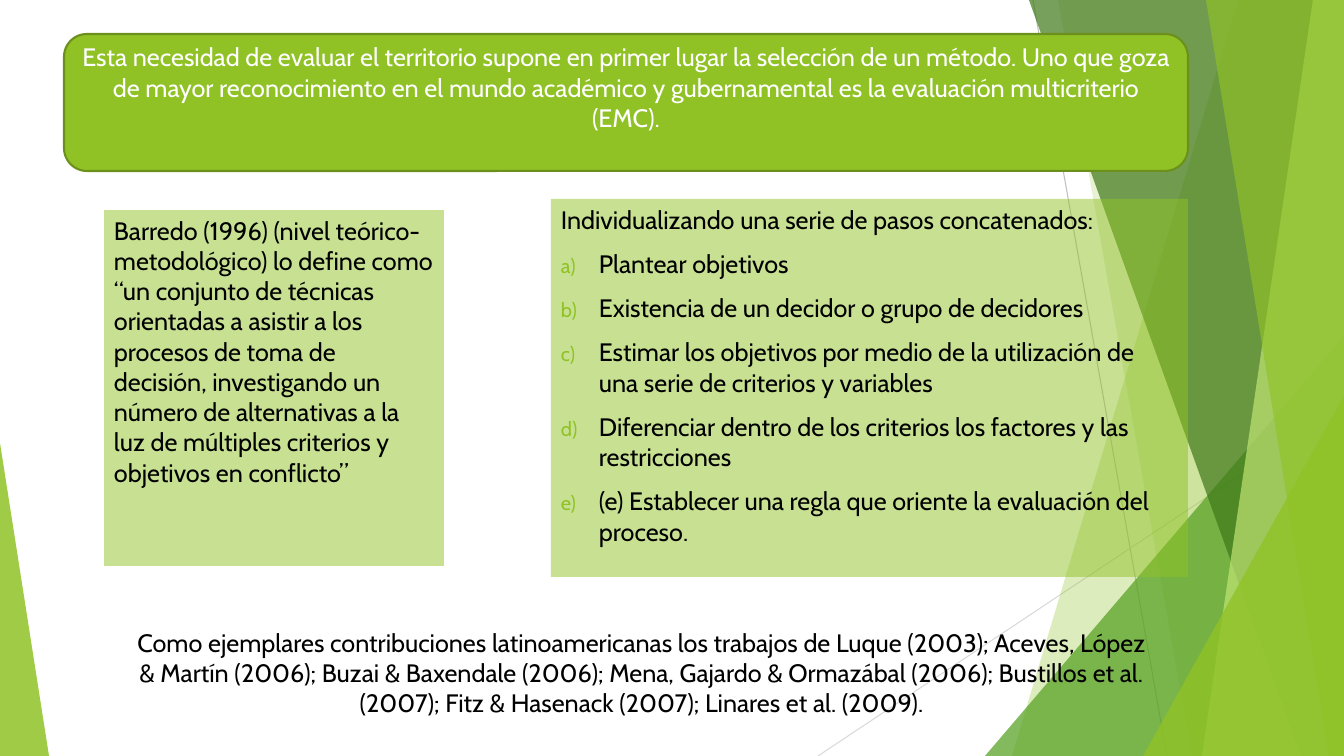
from dataclasses import dataclass

from lxml.etree import SubElement
from pptx import Presentation
from pptx.dml.color import RGBColor
from pptx.enum.shapes import MSO_CONNECTOR, MSO_SHAPE
from pptx.enum.text import PP_ALIGN
from pptx.oxml.ns import qn
from pptx.util import Emu, Pt

EMU_PER_PX = 914400 / 100.8
SLIDE_W, SLIDE_H = 1344, 756


@dataclass(frozen=True)
class Theme:
    font: str = "Cabin"
    text_size: int = 18
    space_before: int = 10
    text: str = "000000"
    inverse: str = "FFFFFF"
    lime: str = "90C226"
    lime_edge: str = "6B901C"
    pale: str = "C0E474"
    green: str = "54A021"
    forest: str = "3F7819"
    ray: str = "BFBFBF"
    ray_light: str = "D9D9D9"


THEME = Theme()

# Top-left x, bottom-left x, colour, opacity; each band reaches the right edge
BANDS_BEHIND = [(1238, 1012, THEME.lime, 30), (1058, 1192, THEME.lime, 20)]
BANDS_FRONT = [
    (1029, 1301, THEME.forest, 70),
    (1313, 1202, THEME.pale, 70),
    (1206, 1329, THEME.lime, 65),
]

HEADER = (
    "Esta necesidad de evaluar el territorio supone en primer lugar la selección de un "
    "método. Uno que goza de mayor reconocimiento en el mundo académico y gubernamental "
    "es la evaluación multicriterio (EMC)."
)
DEFINITION = (
    "Barredo (1996) (nivel teórico- metodológico) lo define como “un conjunto de técnicas "
    "orientadas a asistir a los procesos de toma de decisión, investigando un número de "
    "alternativas a la luz de múltiples criterios y objetivos en conflicto”"
)
STEPS_INTRO = "Individualizando una serie de pasos concatenados:"
STEPS = [
    "Plantear objetivos",
    "Existencia de un decidor o grupo de decidores",
    "Estimar los objetivos por medio de la utilización de una serie de criterios y variables",
    "Diferenciar dentro de los criterios los factores y las restricciones",
    "(e) Establecer una regla que oriente la evaluación del proceso.",
]
EXAMPLES = (
    "Como ejemplares contribuciones latinoamericanas los trabajos de Luque (2003); Aceves, "
    "López & Martín (2006); Buzai & Baxendale (2006); Mena, Gajardo & Ormazábal (2006); "
    "Bustillos et al. (2007); Fitz & Hasenack (2007); Linares et al. (2009)."
)


def px(length):
    return Emu(round(length * EMU_PER_PX))


def paint(shape, color, opacity=100):
    shape.shadow.inherit = False
    shape.line.fill.background()
    shape.fill.solid()
    shape.fill.fore_color.rgb = RGBColor.from_string(color)
    if opacity < 100:
        tint = shape.fill._xPr.find(qn("a:solidFill"))[0]
        SubElement(tint, qn("a:alpha"), val=str(opacity * 1000))


def add_ray(slide, start, end, color):
    ray = slide.shapes.add_connector(
        MSO_CONNECTOR.STRAIGHT, *map(px, start), *map(px, end)
    )
    ray.line.color.rgb = RGBColor.from_string(color)
    ray.line.width = Pt(0.75)
    SubElement(ray._element.spPr, qn("a:effectLst"))


def add_band(slide, top_x, bottom_x, color, opacity):
    outline = slide.shapes.build_freeform(top_x, 0, scale=EMU_PER_PX)
    outline.add_line_segments([(SLIDE_W, 0), (SLIDE_W, SLIDE_H), (bottom_x, SLIDE_H)])
    paint(outline.convert_to_shape(), color, opacity)


def add_triangle(slide, left, top, width, apex, color, opacity):
    """Triangle standing on the slide's bottom edge; apex is 0 (left) to 1 (right)."""
    triangle = slide.shapes.add_shape(
        MSO_SHAPE.ISOSCELES_TRIANGLE, px(left), px(top), px(width), px(SLIDE_H - top)
    )
    triangle.adjustments[0] = apex
    paint(triangle, color, opacity)


def add_panel(slide, kind, box, opacity=100):
    panel = slide.shapes.add_shape(kind, *map(px, box))
    paint(panel, THEME.lime, opacity)
    return panel


def write(paragraph, text, color=THEME.text, align=PP_ALIGN.LEFT):
    paragraph.alignment = align
    run = paragraph.add_run()
    run.text = text
    run.font.name = THEME.font
    run.font.size = Pt(THEME.text_size)
    run.font.color.rgb = RGBColor.from_string(color)


def letter(paragraph):
    """Number the paragraph a), b), c) with a hanging indent."""
    properties = paragraph._p.get_or_add_pPr()
    properties.set("marL", str(px(38)))
    properties.set("indent", str(-px(38)))
    SubElement(SubElement(properties, qn("a:buClr")), qn("a:srgbClr"), val=THEME.lime)
    SubElement(properties, qn("a:buSzPct"), val="80000")
    SubElement(properties, qn("a:buAutoNum"), type="alphaLcParenR")


def text_frame(shape):
    frame = shape.text_frame
    frame.word_wrap = True
    frame.vertical_anchor = None
    frame._txBody.bodyPr.set("anchor", "t")
    return frame


def add_backdrop(slide):
    add_ray(slide, (1033, 0), (1167, SLIDE_H), THEME.ray)
    add_ray(slide, (SLIDE_W, 406), (818, SLIDE_H), THEME.ray_light)
    for band in BANDS_BEHIND:
        add_band(slide, *band)
    add_triangle(slide, 985, 336, 359, 1, THEME.green, 72)
    for band in BANDS_FRONT:
        add_band(slide, *band)
    add_triangle(slide, 1143, 396, 201, 1, THEME.lime, 80)
    add_triangle(slide, 0, 443, 49, 0, THEME.lime, 85)


def add_header(slide):
    header = add_panel(slide, MSO_SHAPE.ROUNDED_RECTANGLE, (64, 34, 1124, 137))
    header.line.color.rgb = RGBColor.from_string(THEME.lime_edge)
    header.line.width = Pt(1.5)
    frame = text_frame(header)
    frame.margin_top = px(1)
    write(frame.paragraphs[0], HEADER, THEME.inverse, PP_ALIGN.CENTER)


def add_definition(slide):
    definition = add_panel(slide, MSO_SHAPE.RECTANGLE, (104, 210, 340, 356), 50)
    write(text_frame(definition).paragraphs[0], DEFINITION)


def add_steps(slide):
    steps = add_panel(slide, MSO_SHAPE.RECTANGLE, (551, 199, 637, 378), 50)
    frame = text_frame(steps)
    write(frame.paragraphs[0], STEPS_INTRO)
    for step in STEPS:
        paragraph = frame.add_paragraph()
        letter(paragraph)
        paragraph.space_before = Pt(THEME.space_before)
        write(paragraph, step)


def add_examples(slide):
    examples = slide.shapes.add_textbox(*map(px, (121, 622, 1041, 102)))
    write(text_frame(examples).paragraphs[0], EXAMPLES, align=PP_ALIGN.CENTER)


def main():
    deck = Presentation()
    deck.slide_width, deck.slide_height = px(SLIDE_W), px(SLIDE_H)
    slide = deck.slides.add_slide(deck.slide_layouts.get_by_name("Blank"))
    add_backdrop(slide)
    add_definition(slide)
    add_header(slide)
    add_steps(slide)
    add_examples(slide)
    deck.save("out.pptx")


if __name__ == "__main__":
    main()
